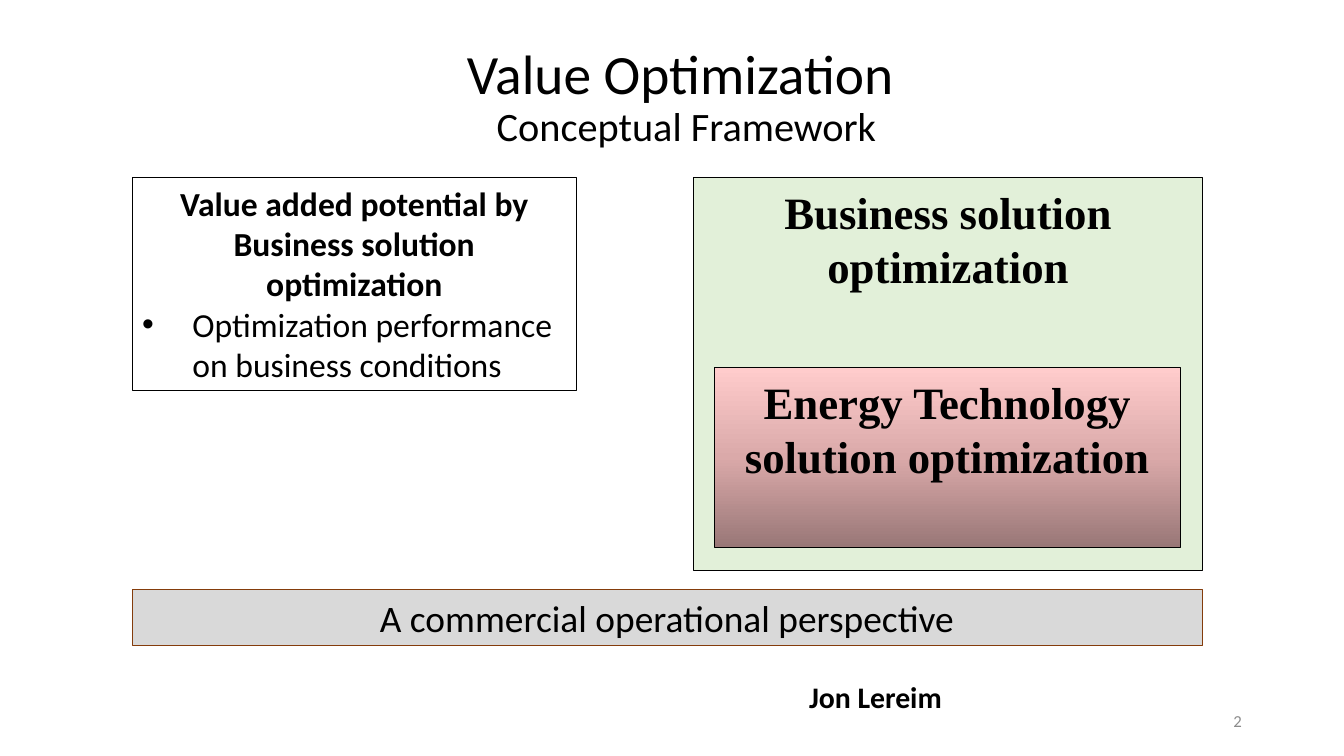
from copy import deepcopy

from lxml import etree
from pptx import Presentation
from pptx.dml.color import RGBColor
from pptx.enum.shapes import MSO_SHAPE
from pptx.enum.text import MSO_ANCHOR, MSO_AUTO_SIZE, PP_ALIGN
from pptx.oxml.ns import qn
from pptx.util import Cm, Pt

RECTANGLE = MSO_SHAPE.RECTANGLE
TOP, MIDDLE = MSO_ANCHOR.TOP, MSO_ANCHOR.MIDDLE
LEFT, CENTER, RIGHT = PP_ALIGN.LEFT, PP_ALIGN.CENTER, PP_ALIGN.RIGHT
NO_AUTO_SIZE = MSO_AUTO_SIZE.NONE
LEFT_EDGE, UPPER_EDGE = 3.33, 4.47


def rgb(value):
    return RGBColor.from_string(value)


def lengths(values):
    return [Cm(value) for value in values]


def add_bullet(paragraph, indent):
    properties = paragraph._p.get_or_add_pPr()
    properties.set("marL", str(Cm(indent)))
    properties.set("indent", str(-Cm(indent)))
    etree.SubElement(properties, qn("a:buFont")).set("typeface", "Arial")
    etree.SubElement(properties, qn("a:buChar")).set("char", "•")


def write(frame, text, size, font="Calibri", color="000000", bold=False,
          align=CENTER, bullet=False, more=False):
    paragraph = frame.add_paragraph() if more else frame.paragraphs[0]
    paragraph.alignment = align
    if bullet:
        add_bullet(paragraph, 1.27)
    run = paragraph.add_run()
    run.text = text
    run.font.size = Pt(size)
    run.font.name = font
    run.font.bold = bold
    run.font.color.rgb = rgb(color)
    return paragraph


def add_panel(slide, box, fill=None, line="000000", insets=(0.25, 0.13)):
    panel = slide.shapes.add_shape(RECTANGLE, *lengths(box))
    panel.shadow.inherit = False
    if fill:
        panel.fill.solid()
        panel.fill.fore_color.rgb = rgb(fill)
    else:
        panel.fill.background()
    panel.line.color.rgb = rgb(line)
    panel.line.width = Pt(0.75)
    frame = panel.text_frame
    frame.word_wrap = True
    frame.vertical_anchor = TOP
    frame.margin_left = frame.margin_right = Cm(insets[0])
    frame.margin_top = frame.margin_bottom = Cm(insets[1])
    return panel


def shade_upward(panel, stops):
    panel.fill.gradient()
    panel.fill.gradient_angle = 90
    stop_list = panel._element.spPr.find(qn("a:gradFill")).find(qn("a:gsLst"))
    while len(stop_list) < len(stops):
        stop_list.append(deepcopy(stop_list[0]))
    for stop, (position, color) in zip(panel.fill.gradient_stops, stops):
        stop.position = position
        stop.color.rgb = rgb(color)


def add_label(slide, box, text, size, wrap=True, anchor=TOP, **text_format):
    frame = slide.shapes.add_textbox(*lengths(box)).text_frame
    frame.word_wrap = wrap
    frame.vertical_anchor = anchor
    write(frame, text, size, **text_format)


def set_title(slide, box, heading, subheading):
    title = slide.shapes.title
    title.left, title.top, title.width, title.height = lengths(box)
    frame = title.text_frame
    frame.auto_size = NO_AUTO_SIZE
    frame.word_wrap = True
    frame.vertical_anchor = MIDDLE
    paragraph = write(frame, heading, 39.6)
    paragraph.line_spacing = 0.9
    paragraph.add_line_break()
    write(frame, subheading, 28.8)


def main():
    deck = Presentation()
    deck.slide_width, deck.slide_height = Cm(33.87), Cm(19.05)
    slide = deck.slides.add_slide(deck.slide_layouts[5])

    business = add_panel(slide, (17.48, UPPER_EDGE, 12.83, 9.91),
                         "E2F0D9", insets=(0.33, 0.18))
    write(business.text_frame, "Business solution optimization", 32,
          font="Times New Roman", bold=True)

    set_title(slide, (LEFT_EDGE, 0.99, 27.94, 2.97),
              "Value Optimization ", "Conceptual Framework")

    technology = add_panel(slide, (18.01, 9.27, 11.73, 4.52),
                           insets=(0.33, 0.18))
    shade_upward(technology, [(0, "997777"), (0.5, "DAA9A9"), (1, "FFCCCC")])
    write(technology.text_frame, "Energy Technology solution optimization",
          32, font="Times New Roman", bold=True)

    potential = add_panel(slide, (LEFT_EDGE, UPPER_EDGE, 11.2, 5.38)).text_frame
    write(potential, "Value added potential by", 24, bold=True)
    write(potential, "Business solution optimization", 24, bold=True, more=True)
    write(potential, "Optimization performance on business conditions", 24,
          align=LEFT, bullet=True, more=True)

    perspective = add_panel(slide, (LEFT_EDGE, 14.86, 26.97, 1.4),
                            "D9D9D9", "843C0B")
    write(perspective.text_frame, "A commercial operational perspective", 26.7)

    add_label(slide, (23.93, 17.65, 7.62, 1.02), "2", 12, anchor=MIDDLE,
              color="8C8C8C", align=RIGHT)
    add_label(slide, (20.14, 16.99, 3.91, 1.17), "Jon Lereim", 21.3,
              wrap=False, bold=True, align=LEFT)

    deck.save("out.pptx")


if __name__ == "__main__":
    main()
